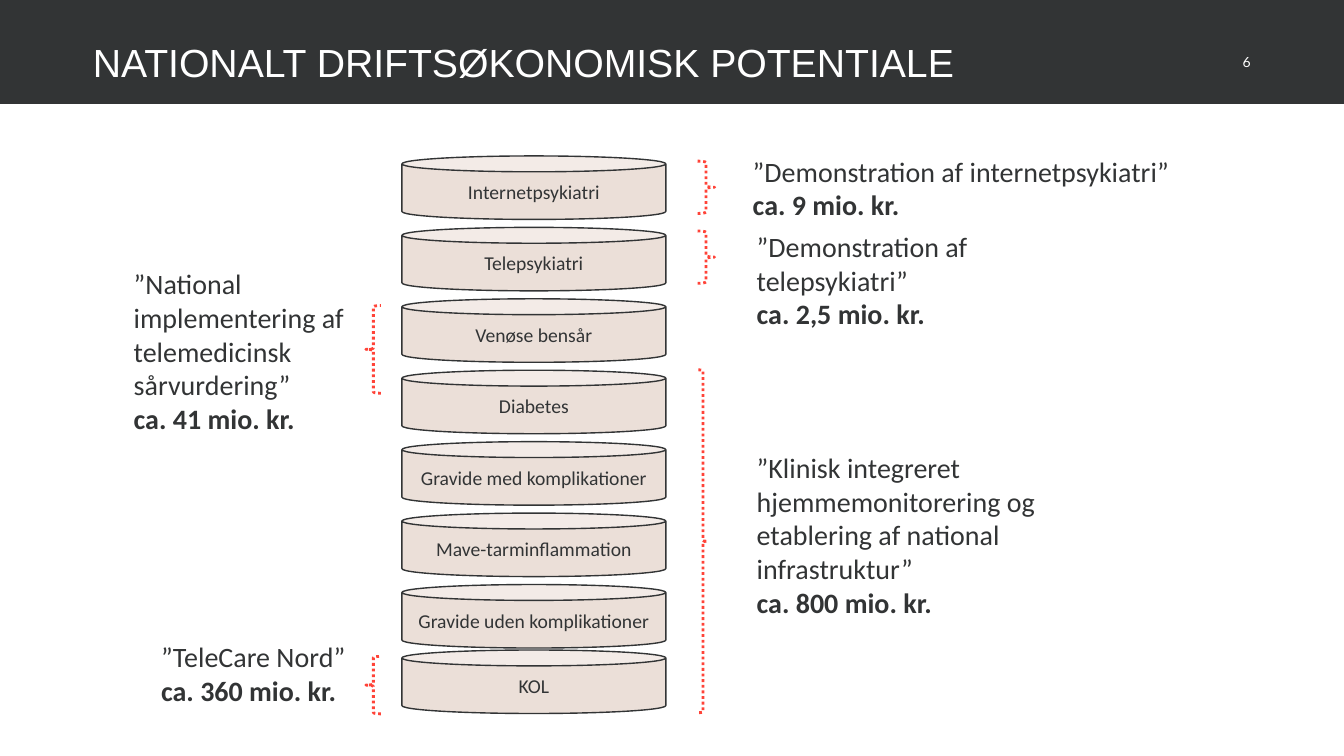
from pptx import Presentation
from pptx import util as u
from pptx.dml import color as dml_color
from pptx.enum import dml, shapes, text

INK, WHITE, SAND, RED = "323435", "FFFFFF", "EBDFD8", "FF4338"


def rgb(value):
    return dml_color.RGBColor.from_string(value)


def write(frame, lines, size, color=INK, font="Calibri", align=text.PP_ALIGN.LEFT,
          anchor=text.MSO_ANCHOR.TOP, inset=True, bold_last=False):
    frame.word_wrap = True
    frame.vertical_anchor = anchor
    if not inset:
        frame.margin_left = frame.margin_right = 0
        frame.margin_top = frame.margin_bottom = 0
    for index, line in enumerate(lines):
        paragraph = frame.paragraphs[0] if index == 0 else frame.add_paragraph()
        paragraph.alignment = align
        run = paragraph.add_run()
        run.text = line
        run.font.name = font
        run.font.size = u.Pt(size)
        run.font.color.rgb = rgb(color)
        run.font.bold = bold_last and index == len(lines) - 1


class PotentialSlide:
    def __init__(self, deck):
        self.shapes = deck.slides.add_slide(deck.slide_layouts[6]).shapes

    def preset(self, kind, box, fill=None, line=None, width=1):
        shape = self.shapes.add_shape(kind, *map(u.Cm, box))
        shape.shadow.inherit = False
        if fill:
            shape.fill.solid()
            shape.fill.fore_color.rgb = rgb(fill)
        else:
            shape.fill.background()
        if line:
            shape.line.color.rgb = rgb(line)
            shape.line.width = u.Pt(width)
        else:
            shape.line.fill.background()
        return shape

    def label(self, box, lines, size, **style):
        frame = self.shapes.add_textbox(*map(u.Cm, box)).text_frame
        write(frame, lines, size, **style)
        return frame

    def cylinder(self, top, name):
        area = self.preset(shapes.MSO_SHAPE.CAN, (10.13, top, 6.65, 1.6), SAND, INK)
        write(area.text_frame, [name], 14, align=text.PP_ALIGN.CENTER,
              anchor=text.MSO_ANCHOR.MIDDLE)

    def brace(self, kind, box):
        brace = self.preset(kind, box, line=RED, width=2)
        brace.line.dash_style = dml.MSO_LINE.ROUND_DOT

    def initiative(self, box, name, amount):
        frame = self.label(box, [f"”{name}”", f"ca. {amount} mio. kr."], 20, bold_last=True)
        frame.auto_size = text.MSO_AUTO_SIZE.SHAPE_TO_FIT_TEXT


def main():
    deck = Presentation()
    deck.slide_width, deck.slide_height = u.Cm(33.87), u.Cm(19.05)
    slide = PotentialSlide(deck)

    slide.preset(shapes.MSO_SHAPE.RECTANGLE, (0, 0, 33.87, 2.62), INK)
    header = dict(color=WHITE, anchor=text.MSO_ANCHOR.MIDDLE, inset=False)
    slide.label((30.63, 0.91, 0.89, 1.32), ["6"], 10, font="Lato",
                align=text.PP_ALIGN.RIGHT, **header)
    slide.label((2.34, 0.91, 28.19, 1.32), ["NATIONALT DRIFTSØKONOMISK POTENTIALE"], 28,
                font="Arial", **header)

    areas = ["Internetpsykiatri", "Telepsykiatri", "Venøse bensår", "Diabetes",
             "Gravide med komplikationer", "Mave-tarminflammation",
             "Gravide uden komplikationer"]
    for row, area in enumerate(areas):
        slide.cylinder(3.93 + 1.8 * row, area)
    slide.cylinder(16.38, "KOL")

    right, left = shapes.MSO_SHAPE.RIGHT_BRACE, shapes.MSO_SHAPE.LEFT_BRACE
    initiatives = [
        (right, (17.58, 4.06, 0.43, 1.32), (18.72, 3.76, 13.59, 1.96),
         "Demonstration af internetpsykiatri", "9"),
        (right, (17.58, 5.82, 0.43, 1.32), (18.82, 5.66, 9.42, 2.82),
         "Demonstration af telepsykiatri", "2,5"),
        (left, (9.22, 7.7, 0.38, 2.21), (3.12, 6.6, 7.39, 4.52),
         "National implementering af telemedicinsk sårvurdering", "41"),
        (right, (17.6, 9.32, 0.23, 8.64), (18.82, 11.23, 8.23, 4.52),
         "Klinisk integreret hjemmemonitorering og etablering af national infrastruktur",
         "800"),
        (left, (9.22, 16.54, 0.38, 1.45), (3.81, 16, 5.79, 1.96), "TeleCare Nord", "360"),
    ]
    for kind, brace_box, text_box, name, amount in initiatives:
        slide.brace(kind, brace_box)
        slide.initiative(text_box, name, amount)

    deck.save("out.pptx")


if __name__ == "__main__":
    main()
